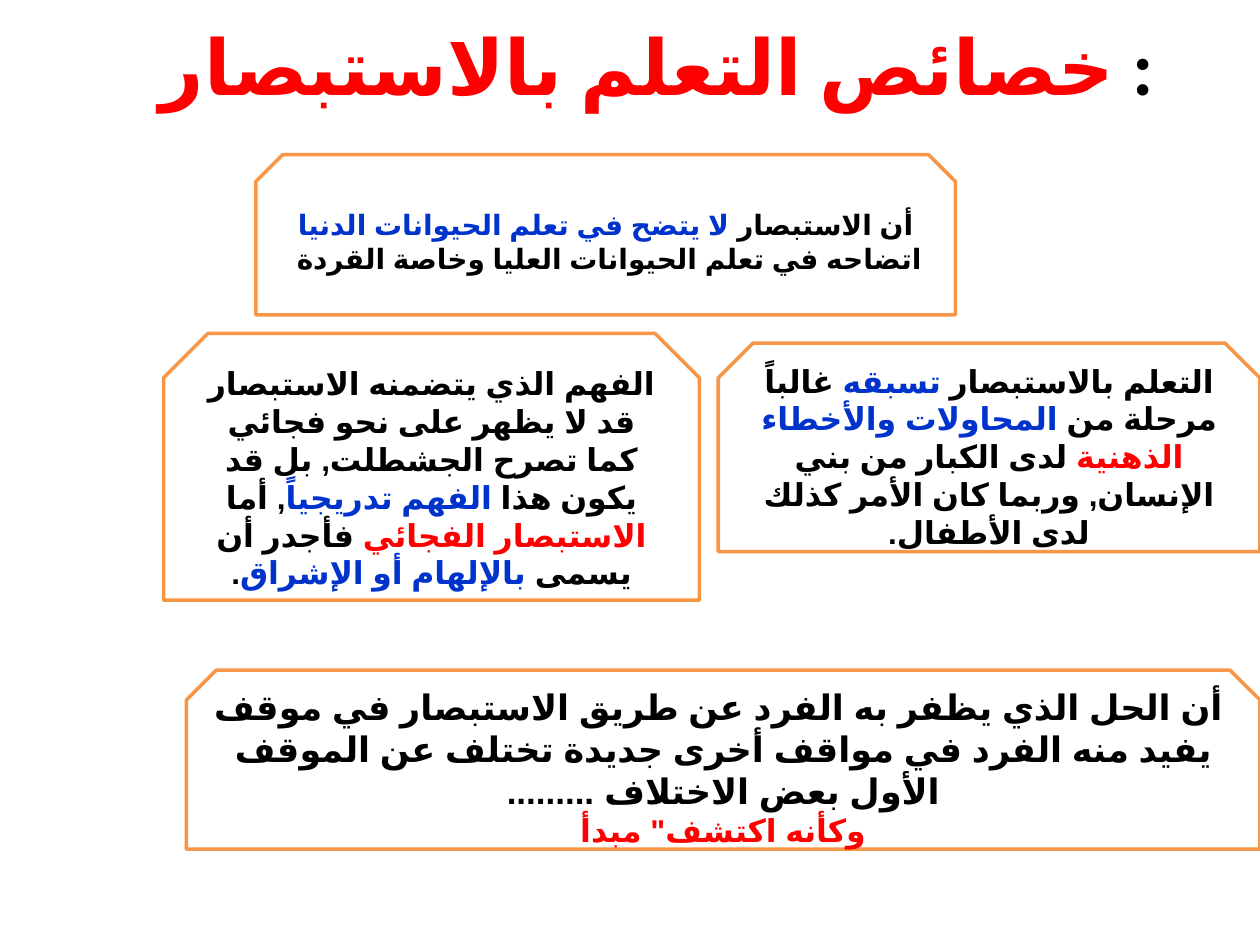
from dataclasses import dataclass

from lxml.etree import SubElement
from pptx import Presentation
from pptx.dml.color import RGBColor
from pptx.enum.shapes import MSO_SHAPE
from pptx.enum.text import MSO_ANCHOR, MSO_AUTO_SIZE, PP_ALIGN
from pptx.oxml.ns import qn
from pptx.slide import Slide
from pptx.util import Cm, Pt


@dataclass(frozen=True)
class Theme:
    black: RGBColor = RGBColor(0x00, 0x00, 0x00)
    blue: RGBColor = RGBColor(0x00, 0x33, 0xCC)
    red: RGBColor = RGBColor(0xFF, 0x00, 0x00)
    white: RGBColor = RGBColor(0xFF, 0xFF, 0xFF)
    orange: RGBColor = RGBColor(0xF7, 0x96, 0x46)
    title_font: str = "Calibri"
    body_font: str = "Arial"
    title_size: int = 44
    large: int = 20
    medium: int = 18
    small: int = 16
    outline: int = 2


THEME = Theme()


@dataclass(frozen=True)
class Phrase:
    text: str
    color: RGBColor = THEME.black


@dataclass(frozen=True)
class Line:
    size: int
    phrases: list[Phrase]


@dataclass(frozen=True)
class Card:
    """A characteristic of insight learning; lengths in centimetres."""
    left: float
    top: float
    width: float
    height: float
    lines: list[Line]


TITLE = Line(THEME.title_size, [
    Phrase("خصائص التعلم بالاستبصار", THEME.red), Phrase(" :")])

CARDS = [
    # Preceded by trial and error
    Card(14.48, 6.92, 10.92, 4.2, [Line(THEME.medium, [
        Phrase("التعلم بالاستبصار"),
        Phrase(" تسبقه", THEME.blue),
        Phrase(" غالباً مرحلة من "),
        Phrase("المحاولات والأخطاء ", THEME.blue),
        Phrase("الذهنية", THEME.red),
        Phrase(" لدى الكبار من بني الإنسان, وربما كان الأمر كذلك لدى الأطفال."),
    ])]),
    # Gradual or sudden understanding
    Card(3.3, 6.72, 10.8, 5.38, [Line(THEME.medium, [
        Phrase("الفهم الذي يتضمنه الاستبصار قد لا يظهر على نحو فجائي "
               "كما تصرح الجشطلت, بل قد يكون هذا "),
        Phrase("الفهم تدريجياً", THEME.blue),
        Phrase(", أما "),
        Phrase("الاستبصار الفجائي", THEME.red),
        Phrase(" فأجدر أن يسمى "),
        Phrase("بالإلهام أو الإشراق", THEME.blue),
        Phrase("."),
    ])]),
    # Transfer to new situations
    Card(3.76, 13.51, 21.64, 3.61, [
        Line(THEME.large, [Phrase(
            " أن الحل الذي يظفر به الفرد عن طريق الاستبصار في موقف يفيد منه "
            "الفرد في مواقف أخرى جديدة تختلف عن الموقف الأول بعض "
            "الاختلاف .........")]),
        Line(THEME.medium, [Phrase('وكأنه اكتشف" مبدأ', THEME.red)]),
    ]),
    # Found in higher animals
    Card(5.16, 3.12, 14.1, 3.23, [Line(THEME.small, [
        Phrase("أن الاستبصار "),
        Phrase("لا يتضح في تعلم الحيوانات الدنيا", THEME.blue),
        Phrase(" اتضاحه في تعلم الحيوانات العليا وخاصة القردة "),
    ])]),
]


def write_line(paragraph, line: Line, font_name: str) -> None:
    for phrase in line.phrases:
        run = paragraph.add_run()
        run.text = phrase.text
        run.font.name = font_name
        run.font.size = Pt(line.size)
        run.font.bold = True
        run.font.color.rgb = phrase.color
        # Arabic letters take the complex-script font
        properties = run._r.get_or_add_rPr()
        properties.set("lang", "ar-SA")
        SubElement(properties, qn("a:cs")).set("typeface", font_name)


def draw_title(slide: Slide) -> None:
    title = slide.shapes.title
    title.left, title.top = Cm(2.97), Cm(0)
    title.width, title.height = Cm(22.43), Cm(2.59)
    frame = title.text_frame
    frame.auto_size = MSO_AUTO_SIZE.NONE
    frame.vertical_anchor = MSO_ANCHOR.MIDDLE
    frame.paragraphs[0].alignment = PP_ALIGN.LEFT
    write_line(frame.paragraphs[0], TITLE, THEME.title_font)


def draw_card(slide: Slide, card: Card) -> None:
    box = slide.shapes.add_shape(
        MSO_SHAPE.SNIP_2_SAME_RECTANGLE,
        Cm(card.left), Cm(card.top), Cm(card.width), Cm(card.height))
    box.shadow.inherit = False
    box.fill.solid()
    box.fill.fore_color.rgb = THEME.white
    box.line.color.rgb = THEME.orange
    box.line.width = Pt(THEME.outline)

    frame = box.text_frame
    frame.word_wrap = True
    frame.vertical_anchor = MSO_ANCHOR.MIDDLE
    for index, line in enumerate(card.lines):
        paragraph = frame.add_paragraph() if index else frame.paragraphs[0]
        paragraph.alignment = PP_ALIGN.CENTER
        # Right-to-left reading order
        paragraph._p.get_or_add_pPr().set("rtl", "1")
        write_line(paragraph, line, THEME.body_font)


def main() -> None:
    presentation = Presentation()
    presentation.slide_width, presentation.slide_height = Cm(25.4), Cm(19.05)
    title_only = presentation.slide_layouts[5]
    slide = presentation.slides.add_slide(title_only)
    draw_title(slide)
    for card in CARDS:
        draw_card(slide, card)
    presentation.save("out.pptx")


if __name__ == "__main__":
    main()
